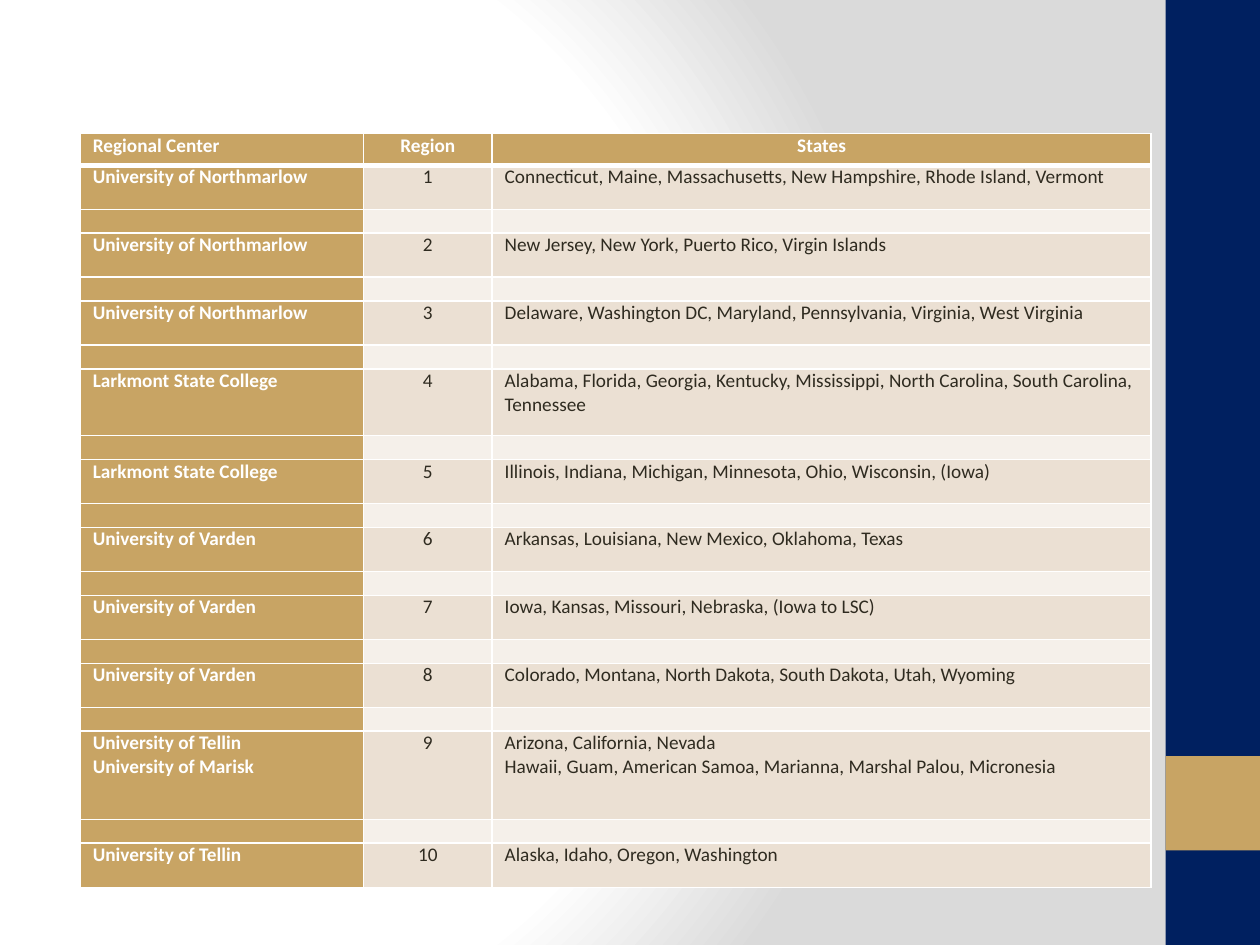
from pptx import Presentation
from pptx.dml.color import RGBColor
from pptx.enum.shapes import MSO_SHAPE
from pptx.enum.text import PP_ALIGN
from pptx.oxml import parse_xml
from pptx.oxml.ns import nsdecls, qn
from pptx.util import Pt
from lxml.etree import SubElement

NAVY, GOLD, WHITE, INK = "002060", "C8A464", "FFFFFF", "2F2B20"
SAND, PALE, GRAY = "EBE0D3", "F5F0EA", "DADADA"
FONT, SIZE = "Calibri", 11
WIDTHS = (162, 73.4, 376.6)
HEAD, GAP, LINE = 18, 13, 25.2

EAST, SOUTH = "University of Northmarlow", "Larkmont State College"
PLAINS, WEST = "University of Varden", "University of Tellin"
CENTERS = [
    (EAST, "Connecticut, Maine, Massachusetts, New Hampshire, Rhode Island, Vermont", LINE),
    (EAST, "New Jersey, New York, Puerto Rico, Virgin Islands", LINE),
    (EAST, "Delaware, Washington DC, Maryland, Pennsylvania, Virginia, West Virginia", LINE),
    (SOUTH, "Alabama, Florida, Georgia, Kentucky, Mississippi, North Carolina, "
            "South Carolina, Tennessee", 38.2),
    (SOUTH, "Illinois, Indiana, Michigan, Minnesota, Ohio, Wisconsin, (Iowa)", LINE),
    (PLAINS, "Arkansas, Louisiana, New Mexico, Oklahoma, Texas", LINE),
    (PLAINS, "Iowa, Kansas, Missouri, Nebraska, (Iowa to LSC)", LINE),
    (PLAINS, "Colorado, Montana, North Dakota, South Dakota, Utah, Wyoming", LINE),
    (WEST + "\nUniversity of Marisk",
     "Arizona, California, Nevada\n"
     "Hawaii, Guam, American Samoa, Marianna, Marshal Palou, Micronesia", 50.4),
    (WEST, "Alaska, Idaho, Oregon, Washington", LINE),
]


def color(code):
    return RGBColor.from_string(code)


def paint(fill, code):
    fill.solid()
    fill.fore_color.rgb = color(code)


def backdrop(slide):
    slide.background.fill.solid()
    props = slide.background._cSld.bg.bgPr
    stops = "".join(
        f'<a:gs pos="{pos * 1000}"><a:srgbClr val="{code}"/></a:gs>'
        for pos, code in ((0, WHITE), (75, WHITE), (100, GRAY)))
    grad = parse_xml(
        f'<a:gradFill {nsdecls("a")} rotWithShape="1"><a:gsLst>{stops}</a:gsLst>'
        '<a:path path="circle">'
        '<a:fillToRect l="20000" t="50000" r="100000" b="50000"/>'
        '</a:path></a:gradFill>')
    props.replace(props[0], grad)


def block(slide, left, top, width, height, code):
    shape = slide.shapes.add_shape(
        MSO_SHAPE.RECTANGLE, Pt(left), Pt(top), Pt(width), Pt(height))
    shape.shadow.inherit = False
    paint(shape.fill, code)
    shape.line.fill.background()


def border(cell, top, bottom):
    props = cell._tc.get_or_add_tcPr()
    for side, width in (("L", 1), ("R", 1), ("T", top), ("B", bottom)):
        props.append(parse_xml(
            f'<a:ln{side} {nsdecls("a")} w="{Pt(width)}"><a:solidFill>'
            f'<a:srgbClr val="{WHITE}"/></a:solidFill></a:ln{side}>'))


def write(cell, text, code, bold, align):
    frame = cell.text_frame
    for num, line in enumerate(text.split("\n")):
        para = frame.add_paragraph() if num else frame.paragraphs[0]
        para.alignment = align
        if not line:
            SubElement(para._p, qn("a:endParaRPr")).set("sz", str(SIZE * 100))
            continue
        run = para.add_run()
        run.text = line
        font = run.font
        font.name, font.size, font.bold = FONT, Pt(SIZE), bold
        font.color.rgb = color(code)


def grid(slide, rows):
    frame = slide.shapes.add_table(
        len(rows), len(WIDTHS), Pt(45.8), Pt(76.4), Pt(sum(WIDTHS)),
        Pt(sum(high for _, high in rows)))
    table = frame.table
    for col, width in zip(table.columns, WIDTHS):
        col.width = Pt(width)
    for r, (texts, high) in enumerate(rows):
        table.rows[r].height = Pt(high)
        for c, text in enumerate(texts):
            cell = table.cell(r, c)
            cell.margin_left = cell.margin_right = Pt(7.2)
            cell.margin_top = cell.margin_bottom = 0
            border(cell, 3 if r == 1 else 1, 3 if r == 0 else 1)
            strong = r == 0 or c == 0
            paint(cell.fill, GOLD if strong else SAND if r % 2 else PALE)
            mid = c == 1 or (r == 0 and c == 2)
            write(cell, text, WHITE if strong else INK, strong,
                  PP_ALIGN.CENTER if mid else PP_ALIGN.LEFT)


def main():
    deck = Presentation()
    deck.slide_width, deck.slide_height = Pt(720), Pt(540)
    slide = deck.slides.add_slide(deck.slide_layouts[6])
    backdrop(slide)
    block(slide, 666, 0, 54, 540, NAVY)
    block(slide, 666, 432, 54, 54, GOLD)
    rows = [(("Regional Center", "Region", "States"), HEAD)]
    for num, (center, states, high) in enumerate(CENTERS, 1):
        if num > 1:
            rows.append((("", "", ""), GAP))
        rows.append(((center, str(num), states), high))
    grid(slide, rows)
    deck.save("out.pptx")


if __name__ == "__main__":
    main()
